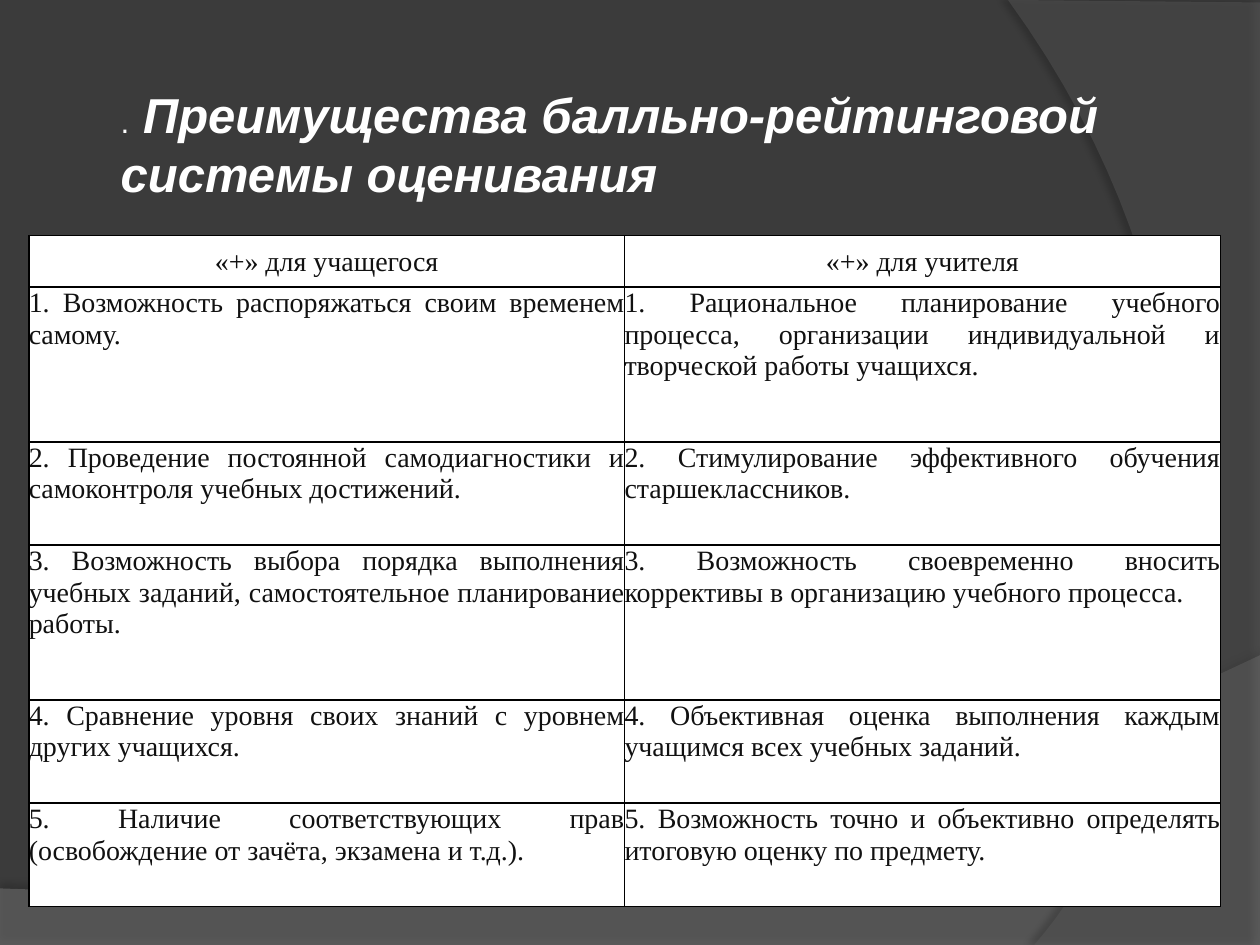
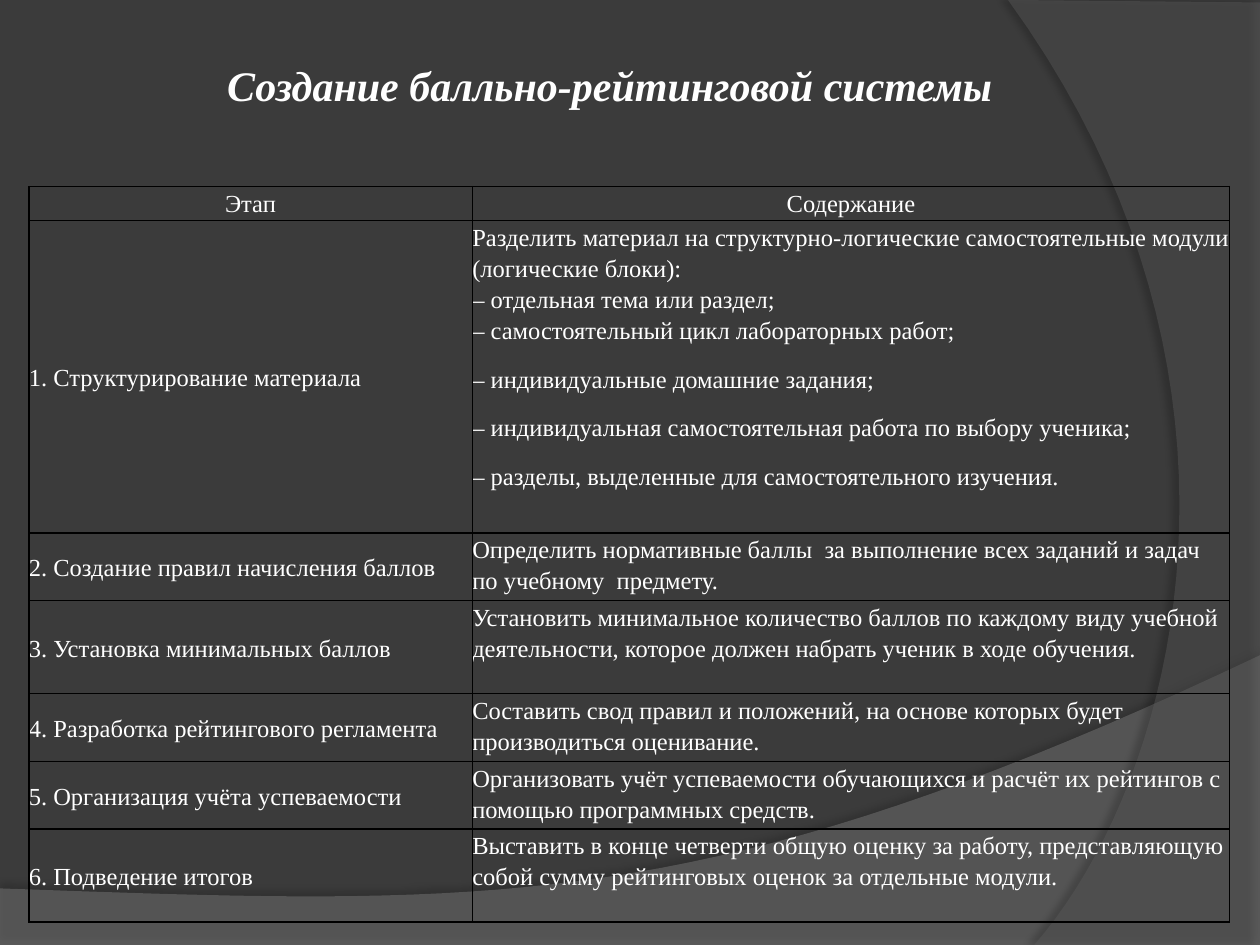
import pptx
import pptx.dml.color
import pptx.enum.text
import pptx.oxml
import pptx.oxml.ns
import pptx.util

Cm = pptx.util.Cm
Pt = pptx.util.Pt
RGBColor = pptx.dml.color.RGBColor
ALIGN = pptx.enum.text.PP_ALIGN
ANCHOR = pptx.enum.text.MSO_ANCHOR

BACKGROUND = RGBColor(0x3B, 0x3B, 0x3B)
WAVE = RGBColor(0x7F, 0x7F, 0x7F)
ARC = RGBColor(0x5E, 0x5E, 0x5E)
WHITE = RGBColor(0xFF, 0xFF, 0xFF)
INK = RGBColor(0x11, 0x11, 0x11)
BLACK = RGBColor(0x00, 0x00, 0x00)
SERIF = "Times New Roman"
SANS = "Arial"
TITLE_ONLY = 5
CURVE_STEPS = 40

WAVE_PATH = [(0, 17.91), (0, 19.07), (25.4, 19.07), (25.4, 13.21)]
WAVE_CURVE = [(25.4, 13.21), (14.2, 18.52), (9.93, 18.26), (0, 17.91)]
ARC_PATH = [(25.4, 0.05), (25.4, 19.05), (20.85, 19.05)]
ARC_CURVE = [(20.85, 19.05), (23.75, 15.72), (25.86, 7.62), (20.32, 0)]

ADVANTAGES = [
    ("«+» для учащегося", "«+» для учителя"),
    ("1. Возможность распоряжаться своим временем самому.",
     "1. Рациональное планирование учебного процесса, организации "
     "индивидуальной и творческой работы учащихся."),
    ("2. Проведение постоянной самодиагностики и самоконтроля учебных достижений.",
     "2. Стимулирование эффективного обучения старшеклассников."),
    ("3. Возможность выбора порядка выполнения учебных заданий, "
     "самостоятельное планирование работы.",
     "3. Возможность своевременно вносить коррективы в организацию учебного процесса."),
    ("4. Сравнение уровня своих знаний с уровнем других учащихся.",
     "4. Объективная оценка выполнения каждым учащимся всех учебных заданий."),
    ("5. Наличие соответствующих прав (освобождение от зачёта, экзамена и т.д.).",
     "5. Возможность точно и объективно определять итоговую оценку по предмету."),
]

STAGES = [
    ("Этап", "Содержание"),
    ("1. Структурирование материала",
     "Разделить материал на структурно-логические самостоятельные модули "
     "(логические блоки): \n"
     "– отдельная тема или раздел;\n"
     "– самостоятельный цикл лабораторных работ;\n"
     "– индивидуальные домашние задания;\n"
     "– индивидуальная самостоятельная работа по выбору ученика;\n"
     "– разделы, выделенные для самостоятельного изучения."),
    ("2. Создание правил начисления баллов",
     "Определить нормативные баллы  за выполнение всех заданий и задач "
     "по учебному  предмету."),
    ("3. Установка минимальных баллов",
     "Установить минимальное количество баллов по каждому виду учебной "
     "деятельности, которое должен набрать ученик в ходе обучения."),
    ("4. Разработка рейтингового регламента",
     "Составить свод правил и положений, на основе которых будет "
     "производиться оценивание."),
    ("5. Организация учёта успеваемости",
     "Организовать учёт успеваемости обучающихся и расчёт их рейтингов "
     "с помощью программных средств."),
    ("6. Подведение итогов",
     "Выставить в конце четверти общую оценку за работу, представляющую "
     "собой сумму рейтинговых оценок за отдельные модули."),
]


def bezier(p0, p1, p2, p3):
    """Return the points of a cubic curve after its start."""
    points = []
    for i in range(1, CURVE_STEPS + 1):
        t = i / CURVE_STEPS
        u = 1 - t
        points.append(tuple(
            u**3 * a + 3 * u * u * t * b + 3 * u * t * t * c + t**3 * d
            for a, b, c, d in zip(p0, p1, p2, p3)))
    return points


class Deck:
    """Hold the shared style and the current slide."""

    def __init__(self):
        self.prs = pptx.Presentation()
        self.prs.slide_width, self.prs.slide_height = Cm(25.4), Cm(19.05)
        self.master = self.prs.slide_master
        self.master.background.fill.solid()
        self.master.background.fill.fore_color.rgb = BACKGROUND
        self.s = None

    def slide(self):
        """Start a slide."""
        self.s = self.prs.slides.add_slide(self.prs.slide_layouts[TITLE_ONLY])

    def master_band(self, points, color, opacity, shadow):
        """Draw a translucent shape and hand it to the slide master."""
        points = [(Cm(x), Cm(y)) for x, y in points]
        builder = self.s.shapes.build_freeform(*points[0])
        builder.add_line_segments(points[1:])
        sp = builder.convert_to_shape()
        sp.fill.solid()
        sp.fill.fore_color.rgb = color
        sp.line.fill.background()
        rgb = sp.element.spPr.find(".//" + pptx.oxml.ns.qn("a:srgbClr"))
        rgb.append(pptx.oxml.parse_xml(
            f'<a:alpha {pptx.oxml.ns.nsdecls("a")} val="{opacity * 1000}"/>'))
        alpha, blur, dist, angle = shadow
        sp.element.spPr.append(pptx.oxml.parse_xml(
            f'<a:effectLst {pptx.oxml.ns.nsdecls("a")}>'
            f'<a:outerShdw blurRad="{Pt(blur)}" dist="{Pt(dist)}" '
            f'dir="{angle * 60000}" algn="ctr" rotWithShape="0">'
            f'<a:srgbClr val="{BLACK}"><a:alpha val="{alpha * 1000}"/></a:srgbClr>'
            '</a:outerShdw></a:effectLst>'))
        sp.element.nvSpPr.cNvPr.id = 20 + len(self.master.shapes)
        self.master.shapes.element.append(sp.element)

    def title(self, box, runs, font, align, anchor, wrap=True):
        """Place the title; each run is text, size, bold, italic."""
        sp = self.s.shapes.title
        sp.left, sp.top, sp.width, sp.height = (Cm(v) for v in box)
        tf = sp.text_frame
        tf.word_wrap = wrap
        tf.auto_size = pptx.enum.text.MSO_AUTO_SIZE.SHAPE_TO_FIT_TEXT
        tf.vertical_anchor = anchor
        p = tf.paragraphs[0]
        p.alignment = align
        for text, size, bold, italic in runs:
            r = p.add_run()
            r.text = text
            r.font.name, r.font.size = font, Pt(size)
            r.font.bold, r.font.italic = bold, italic
            r.font.color.rgb = WHITE

    def table(self, left, top, widths, heights, rows, format_cell):
        """Add a bordered table and format each cell with a function."""
        frame = self.s.shapes.add_table(
            len(heights), len(widths), Cm(left), Cm(top),
            Cm(sum(widths)), Cm(sum(heights)))
        tbl = frame.table
        tbl.first_row = tbl.horz_banding = False
        for column, width in zip(tbl.columns, widths):
            column.width = Cm(width)
        for row, height in zip(tbl.rows, heights):
            row.height = Cm(height)
        for i, texts in enumerate(rows):
            for j, text in enumerate(texts):
                cell = tbl.cell(i, j)
                cell.text = text
                cell.margin_left = cell.margin_right = 0
                cell.margin_top = cell.margin_bottom = 0
                self.border(cell)
                format_cell(cell, i, j)

    def border(self, cell):
        """Draw the four edges of a cell."""
        tc_pr = cell._tc.get_or_add_tcPr()
        for edge in "LRTB":
            tc_pr.append(pptx.oxml.parse_xml(
                f'<a:ln{edge} {pptx.oxml.ns.nsdecls("a")} w="{Pt(1)}"><a:solidFill>'
                f'<a:srgbClr val="{BLACK}"/></a:solidFill></a:ln{edge}>'))

    def cell_text(self, cell, size, color, spacing, align):
        """Format all paragraphs of a cell."""
        for p in cell.text_frame.paragraphs:
            p.alignment = align
            p.line_spacing = spacing
            p.font.name, p.font.size = SERIF, Pt(size)
            p.font.color.rgb = color

    def advantage_cell(self, cell, i, j):
        """Format a cell of the white table."""
        cell.fill.solid()
        cell.fill.fore_color.rgb = WHITE
        header = i == 0
        self.cell_text(cell, 16, INK, Pt(18), ALIGN.CENTER if header else ALIGN.JUSTIFY)
        if header:
            cell.vertical_anchor = ANCHOR.MIDDLE
            cell.text_frame.paragraphs[0].space_after = Pt(10)

    def stage_cell(self, cell, i, j):
        """Format a cell of the transparent table."""
        cell.fill.background()
        header = i == 0
        self.cell_text(cell, 14, WHITE, 1.15, ALIGN.CENTER if header else ALIGN.LEFT)
        if j == 0 and not header:
            cell.vertical_anchor = ANCHOR.MIDDLE
        for p in cell.text_frame.paragraphs[0 if header else 2:]:
            p.space_after = Pt(10)


def main():
    """Build the deck."""
    deck = Deck()

    deck.slide()
    deck.master_band(WAVE_PATH + bezier(*WAVE_CURVE), WAVE, 45, (35, 4, 3.5, 270))
    deck.master_band(ARC_PATH + bezier(*ARC_CURVE), ARC, 40, (45, 4, 4, 180))
    deck.table(0.58, 4.75, [12.01, 12.01], [1.04, 3.12, 2.08, 3.12, 2.08, 2.08],
               ADVANTAGES, deck.advantage_cell)
    deck.title((2.18, 1.57, 20.24, 2.64),
               [(".", 18, False, False), (" ", 28, False, True),
                ("Преимущества балльно-рейтинговой системы оценивания", 28, True, True)],
               SANS, ALIGN.LEFT, ANCHOR.TOP)

    deck.slide()
    deck.table(0.58, 3.76, [8.94, 15.27], [0.64, 6.3, 1.27, 1.88, 1.27, 1.27, 1.88],
               STAGES, deck.stage_cell)
    deck.title((4.24, 1.07, 16.1, 1.27),
               [("Создание балльно-рейтинговой системы", 24, True, True)],
               SERIF, ALIGN.CENTER, ANCHOR.MIDDLE, wrap=False)

    deck.prs.save("out.pptx")


if __name__ == "__main__":
    main()
